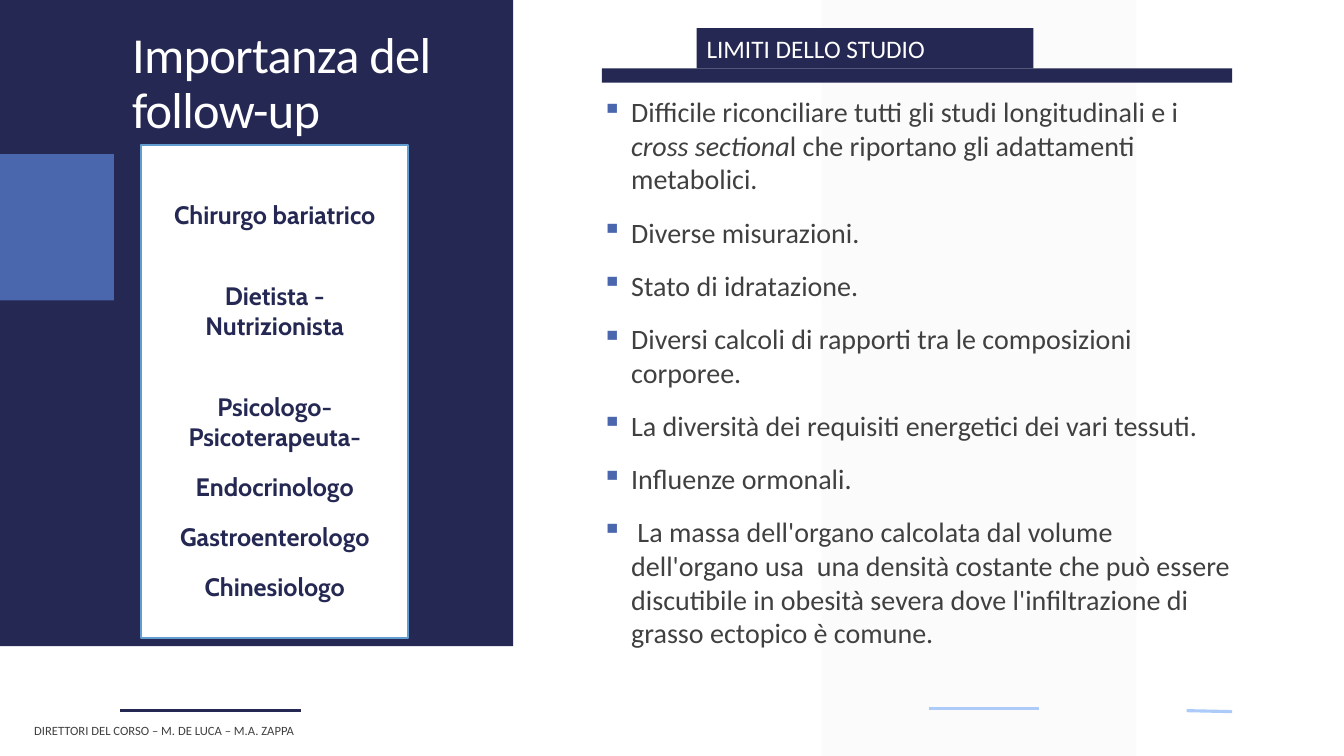
from lxml.etree import SubElement
from pptx import Presentation
from pptx.dml.color import RGBColor
from pptx.enum.shapes import MSO_CONNECTOR, MSO_SHAPE
from pptx.enum.text import MSO_ANCHOR, MSO_AUTO_SIZE, PP_ALIGN
from pptx.oxml.ns import qn
from pptx.util import Pt

PX = 9144
COLORS = {
    "navy": "242852", "blue": "4A66AC", "sky": "ACCBF9", "edge": "629DD1",
    "pale": "F2F2F2", "white": "FFFFFF", "text": "404040",
}
LIMITS = [
    ["Difficile riconciliare tutti gli studi longitudinali e i ", "cross sectiona",
     "l che riportano gli adattamenti metabolici."],
    ["Diverse misurazioni."],
    ["Stato di idratazione."],
    ["Diversi calcoli di rapporti tra le composizioni corporee."],
    ["La diversità dei requisiti energetici dei vari tessuti."],
    ["Influenze ormonali."],
    [" La massa dell'organo calcolata dal volume dell'organo usa  una densità costante "
     "che può essere discutibile in obesità severa dove l'infiltrazione di grasso "
     "ectopico è comune."],
]
ROLES = [
    ("Chirurgo bariatrico", 0), ("Dietista -\vNutrizionista", 34),
    ("Psicologo-Psicoterapeuta-", 34), ("Endocrinologo", 12),
    ("Gastroenterologo", 12), ("Chinesiologo", 12),
]


def px(*lengths):
    """Turn px lengths into EMU."""
    return [length * PX for length in lengths]


def rgb(name):
    """Look up a colour by its name."""
    return RGBColor.from_string(COLORS[name])


def add_block(slide, box, fill, preset=MSO_SHAPE.RECTANGLE):
    """Add a flat shape without an outline."""
    block = slide.shapes.add_shape(preset, *px(*box))
    block.shadow.inherit = False
    block.fill.solid()
    block.fill.fore_color.rgb = rgb(fill)
    block.line.fill.background()
    return block


def add_rule(slide, start, end, color):
    """Add a thin footer line."""
    rule = slide.shapes.add_connector(MSO_CONNECTOR.STRAIGHT, *px(*start, *end))
    rule.line.color.rgb = rgb(color)
    rule.line.width = Pt(2.25)
    SubElement(rule.element.spPr, qn("a:effectLst"))


def set_frame(frame, anchor, insets=(10, 5, 10, 5)):
    """Set wrapping, anchor and insets of a text frame."""
    frame.word_wrap = True
    frame.auto_size = MSO_AUTO_SIZE.NONE
    frame.vertical_anchor = anchor
    (frame.margin_left, frame.margin_top,
     frame.margin_right, frame.margin_bottom) = px(*insets)


def style(paragraph, size, color, face="Calibri", bold=False, align=PP_ALIGN.LEFT):
    """Format the runs of a paragraph."""
    paragraph.alignment = align
    for run in paragraph.runs:
        run.font.size = Pt(size)
        run.font.name = face
        run.font.bold = bold
        run.font.color.rgb = rgb(color)


def add_bullet(paragraph):
    """Give a paragraph a hanging square bullet."""
    properties = paragraph._p.get_or_add_pPr()
    properties.set("marL", str(29 * PX))
    properties.set("indent", str(-29 * PX))
    bullet_color = SubElement(properties, qn("a:buClr"))
    SubElement(bullet_color, qn("a:srgbClr"), val=COLORS["blue"])
    SubElement(properties, qn("a:buChar"), char="▪")


def add_backdrop(slide, height):
    """Draw the pale band behind the content."""
    band = add_block(slide, (815, 0, 312, height), "pale", MSO_SHAPE.PARALLELOGRAM)
    band.adjustments[0] = 0
    tint = band.fill._xPr.find(".//" + qn("a:srgbClr"))
    SubElement(tint, qn("a:alpha"), val="30000")


def add_follow_up(slide, left, top, width, height):
    """Build the navy panel with the title and the list of specialists."""
    add_block(slide, (left, top, width, height), "navy")
    add_block(slide, (left, top + 153, 113, 145), "blue")

    title = slide.shapes.title
    slide.shapes.element.append(title.element)
    title.left, title.top, title.width, title.height = px(left + 121, top + 17, 336, 126)
    title.text_frame.text = "Importanza del follow-up"
    set_frame(title.text_frame, MSO_ANCHOR.BOTTOM)
    heading = title.text_frame.paragraphs[0]
    heading.line_spacing = 0.9
    style(heading, 36, "white")
    heading.runs[0].font._element.set("spc", "-50")

    team = add_block(slide, (left + 140, top + 144, 265, 489), "white")
    team.line.color.rgb = rgb("edge")
    team.line.width = Pt(1.25)
    team.text_frame.text = "\n".join(role for role, _ in ROLES)
    set_frame(team.text_frame, MSO_ANCHOR.TOP, (10, 54, 10, 5))
    for paragraph, (_, gap) in zip(team.text_frame.paragraphs, ROLES):
        paragraph.space_before = Pt(gap)
        paragraph.space_after = Pt(2)
        style(paragraph, 18, "navy", "Cabin", True, PP_ALIGN.CENTER)


def add_limits(slide, left, top, width):
    """Build the tabbed heading and the list of study limits."""
    add_block(slide, (left, top + 40, width, 14), "navy")
    tab = add_block(slide, (left + 94, top, 334, 40), "navy")
    tab.text_frame.text = "LIMITI DELLO STUDIO"
    set_frame(tab.text_frame, MSO_ANCHOR.TOP)
    style(tab.text_frame.paragraphs[0], 18, "white")

    limits = slide.shapes.add_textbox(*px(left, top + 61, width, 532)).text_frame
    set_frame(limits, MSO_ANCHOR.TOP, (0, 5, 0, 5))
    for index, parts in enumerate(LIMITS):
        paragraph = limits.add_paragraph() if index else limits.paragraphs[0]
        for position, part in enumerate(parts):
            run = paragraph.add_run()
            run.text = part
            run.font.italic = position == 1
        paragraph.space_before = Pt(12)
        paragraph.space_after = Pt(2)
        style(paragraph, 20, "text")
        add_bullet(paragraph)


def add_footer(slide, left, top):
    """Draw the footer lines and the course directors."""
    add_rule(slide, (left + 95, top), (left + 275, top), "navy")
    add_rule(slide, (left + 897, top - 2), (left + 1006, top - 2), "sky")
    add_rule(slide, (left + 1153, top), (left + 1198, top + 1), "sky")
    directors = slide.shapes.add_textbox(*px(left, top, 530, 40)).text_frame
    directors.text = "DIRETTORI DEL CORSO – M. DE LUCA – M.A. ZAPPA"
    set_frame(directors, MSO_ANCHOR.MIDDLE)
    style(directors.paragraphs[0], 9, "text")


def main():
    """Assemble and save the slide."""
    presentation = Presentation()
    presentation.slide_width, presentation.slide_height = px(1333, 750)
    slide = presentation.slides.add_slide(presentation.slide_layouts[5])
    add_backdrop(slide, 750)
    add_follow_up(slide, 0, 0, 509, 641)
    add_limits(slide, 597, 28, 625)
    add_footer(slide, 24, 705)
    presentation.save("out.pptx")


if __name__ == "__main__":
    main()
